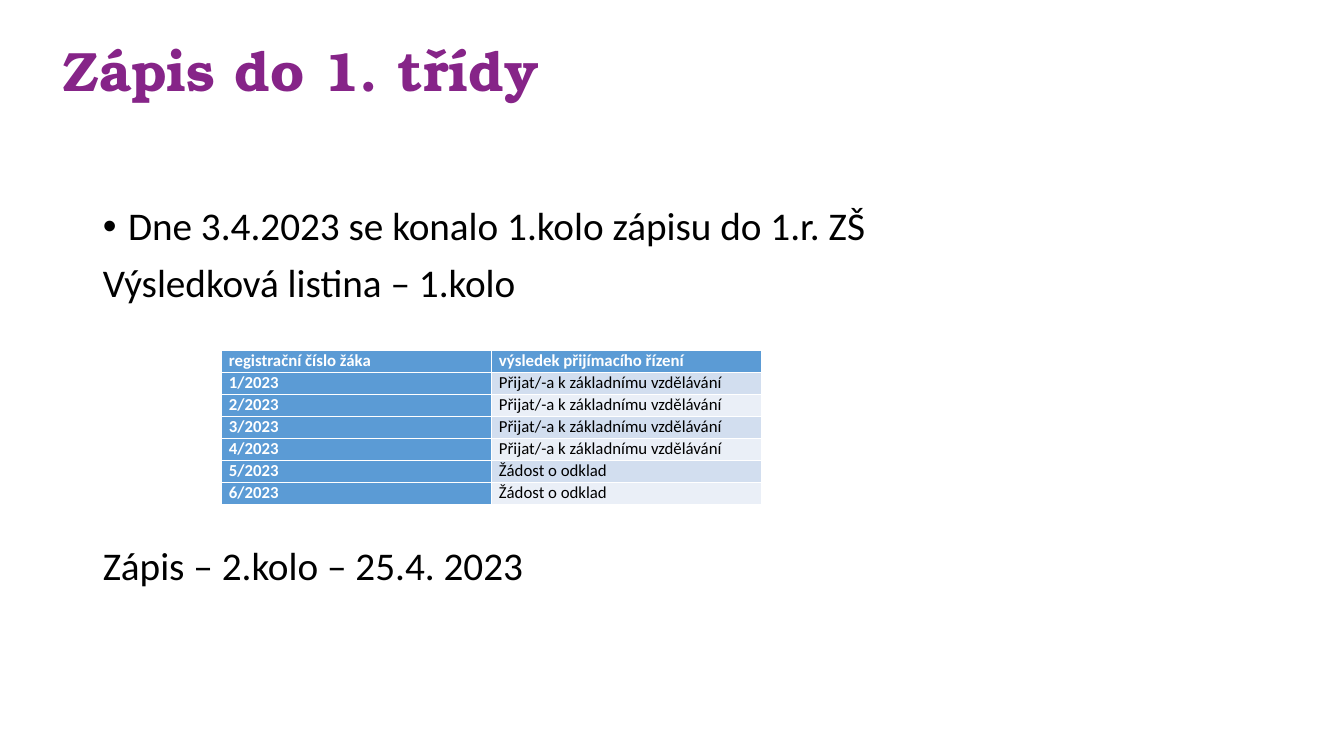
from lxml.etree import SubElement
from pptx import Presentation
from pptx.dml.color import RGBColor
from pptx.enum.text import MSO_ANCHOR, MSO_AUTO_SIZE, PP_ALIGN
from pptx.oxml.ns import qn
from pptx.util import Inches, Pt

WIDTH, HEIGHT = Inches(13.33), Inches(7.5)
TITLE_FONT, BODY_FONT = "TeX Gyre Bonum", "Calibri"
PURPLE, BLACK, WHITE = "862488", "000000", "FFFFFF"
BLUE, BANDS = "5B9BD5", ("D2DEEF", "EAEFF7")
ADMITTED, DEFERRED = "Přijat/-a k základnímu vzdělávání", "Žádost o odklad"
HEADINGS = ("registrační číslo žáka", "výsledek přijímacího řízení")
RESULTS = [ADMITTED] * 4 + [DEFERRED] * 2
BODY_LINES = [
    ("Dne 3.4.2023 se konalo 1.kolo zápisu do 1.r. ZŠ", True, 0),
    ("Výsledková listina – 1.kolo", False, 10),
    ("Zápis – 2.kolo – 25.4. 2023", False, 172),
]


def color(value):
    """Turn a hex string into a colour."""
    return RGBColor.from_string(value)


def place(shape, left, top, width, height):
    """Position a shape by shares of the slide's size."""
    shape.left, shape.width = int(WIDTH * left), int(WIDTH * width)
    shape.top, shape.height = int(HEIGHT * top), int(HEIGHT * height)


def set_font(paragraph, name, size, value, bold=False):
    """Format all the text of a paragraph."""
    font = paragraph.font
    font.name, font.size, font.bold = name, Pt(size), bold
    font.color.rgb = color(value)


def set_bullet(paragraph, bulleted):
    """Give a paragraph a hanging round bullet, or none."""
    properties = paragraph._p.get_or_add_pPr()
    indent = Inches(0.25) if bulleted else 0
    properties.set("marL", str(indent))
    properties.set("indent", str(-indent))
    if bulleted:
        SubElement(properties, qn("a:buFont"), typeface="Arial")
        SubElement(properties, qn("a:buChar"), char="•")
    else:
        SubElement(properties, qn("a:buNone"))


def fill_title(shape, text):
    """Write and format the slide title."""
    place(shape, 0.04, 0.065, 0.433, 0.065)
    frame = shape.text_frame
    frame.text = text
    frame.auto_size = MSO_AUTO_SIZE.NONE
    frame.vertical_anchor = MSO_ANCHOR.MIDDLE
    paragraph = frame.paragraphs[0]
    paragraph.alignment = PP_ALIGN.LEFT
    paragraph.line_spacing = 0.9
    set_font(paragraph, TITLE_FONT, 39.6, PURPLE, True)


def fill_body(shape, lines):
    """Write the body lines with their bullets and gaps."""
    place(shape, 0.069, 0.267, 0.863, 0.635)
    frame = shape.text_frame
    frame.text = "\n".join(text for text, _, _ in lines)
    frame.auto_size = MSO_AUTO_SIZE.NONE
    for paragraph, (_, bulleted, gap) in zip(frame.paragraphs, lines):
        set_bullet(paragraph, bulleted)
        paragraph.line_spacing = 0.9
        paragraph.space_before = Pt(gap)
        set_font(paragraph, BODY_FONT, 28, BLACK)


def fill_cell(cell, text, fill, value, bold):
    """Write one table cell on a solid fill."""
    cell.text = text
    cell.margin_left = cell.margin_right = Inches(0.07)
    cell.margin_top = cell.margin_bottom = 0
    cell.fill.solid()
    cell.fill.fore_color.rgb = color(fill)
    set_font(cell.text_frame.paragraphs[0], BODY_FONT, 12, value, bold)


def add_results(slide, headings, results):
    """Add the table of registration numbers and results."""
    rows = [headings] + [(f"{number}/2023", result)
                         for number, result in enumerate(results, 1)]
    frame = slide.shapes.add_table(
        len(rows), len(headings), int(WIDTH * 0.165), int(HEIGHT * 0.464),
        int(WIDTH * 0.402), int(HEIGHT * 0.029) * len(rows))
    table = frame.table
    table.first_col = True
    for row, texts in enumerate(rows):
        for column, text in enumerate(texts):
            heading = row == 0 or column == 0
            fill = BLUE if heading else BANDS[(row - 1) % 2]
            fill_cell(table.cell(row, column), text, fill,
                      WHITE if heading else BLACK, heading)


def main():
    """Build and save the slide."""
    presentation = Presentation()
    presentation.slide_width, presentation.slide_height = WIDTH, HEIGHT
    slide = presentation.slides.add_slide(presentation.slide_layouts[1])
    fill_title(slide.shapes.title, "Zápis do 1. třídy")
    fill_body(slide.placeholders[1], BODY_LINES)
    add_results(slide, HEADINGS, RESULTS)
    presentation.save("out.pptx")


if __name__ == "__main__":
    main()
